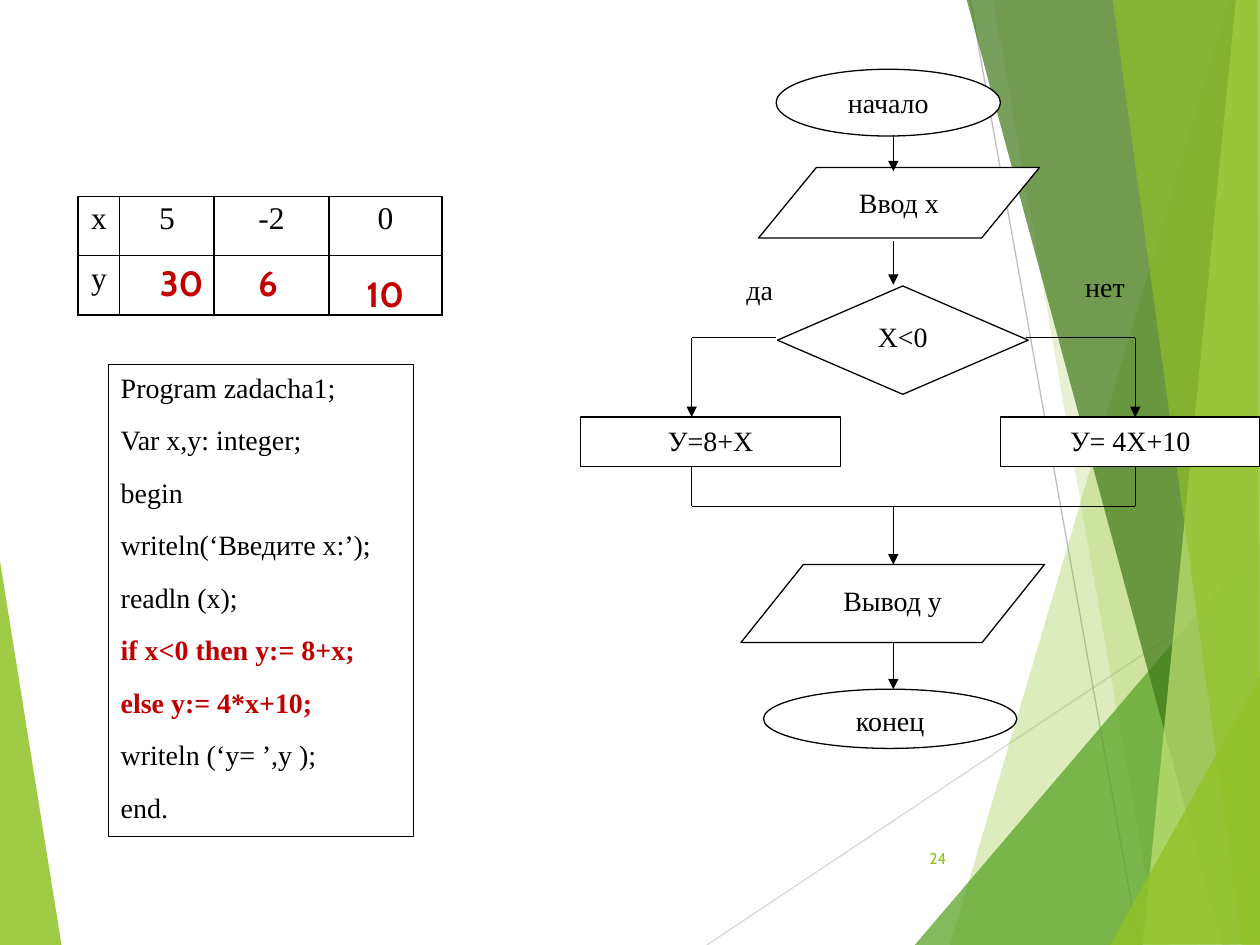
import pptx
import pptx.util
import pptx.dml.color
import pptx.enum.shapes
import pptx.enum.text
import pptx.oxml
import pptx.oxml.ns

Inches, Pt = pptx.util.Inches, pptx.util.Pt
MSO = pptx.enum.shapes.MSO_SHAPE
ALIGN = pptx.enum.text.PP_ALIGN
ANCHOR = pptx.enum.text.MSO_ANCHOR
NS = pptx.oxml.ns.nsdecls("a")

BLACK, WHITE, RED, GREEN = "000000", "FFFFFF", "C00000", "90C226"
SERIF = {"name": "Times New Roman", "size": Pt(16), "bold": False}
ANSWER = {"name": "Cabin", "size": Pt(20), "bold": True}
NUMBER = {"name": "Cabin", "size": Pt(9), "bold": False}

# fill, opacity in percent, corner points
FACETS_BACK = [(GREEN, 85, [(-0.01, 4.39), (0.49, 7.51), (-0.01, 7.5)])]
FACETS = [
    (GREEN, 30, [(9.75, 0), (7.54, 7.5), (10.02, 7.51), (10.01, 0.01)]),
    (GREEN, 20, [(7.88, -0.01), (9.19, 7.5), (10.01, 7.5), (10.01, -0.01)]),
    ("54A021", 72, [(7.26, 7.5), (10, 4.29), (10.01, 7.5)]),
    ("3F7819", 70, [(7.67, -0.01), (9.7, 7.5), (10.01, 7.49), (10.01, -0.01)]),
    ("C0E474", 70, [(9.81, -0.01), (9.07, 7.5), (10.01, 7.5), (10, -0.01)]),
    (GREEN, 65, [(8.83, -0.01), (9.86, 7.5), (10, 7.5), (9.98, -0.01)]),
    (GREEN, 80, [(8.81, 7.5), (10.01, 5.35), (10.01, 7.49)]),
]

CODE = [
    ("Program zadacha1;", False),
    ("Var x,y: integer;", False),
    ("begin", False),
    ("writeln(‘Введите x:’);", False),
    ("readln (x);", False),
    ("if x<0 then y:= 8+x;", True),
    ("else y:= 4*x+10;", True),
    ("writeln (‘y= ’,y );", False),
    ("end.", False),
]

MAIN_X, YES_X, NO_X = 7.09, 5.49, 9.01
BRANCH_Y, BOX_TOP, BOX_BOTTOM, MERGE_Y = 2.68, 3.31, 3.7, 4.02

BLOCKS = [
    (MSO.OVAL, (6.16, 0.55, 1.78, 0.53), "начало", None),
    (MSO.PARALLELOGRAM, (6.02, 1.33, 2.23, 0.56), "Ввод х", 0.82),
    (MSO.DIAMOND, (6.17, 2.27, 1.99, 0.86), "Х<0", None),
    (MSO.RECTANGLE, (4.61, BOX_TOP, 2.06, 0.39), "У=8+Х", None),
    (MSO.RECTANGLE, (7.94, BOX_TOP, 2.06, 0.39), "У= 4Х+10", None),
    (MSO.PARALLELOGRAM, (5.88, 4.48, 2.41, 0.62), "Вывод у", 0.8),
    (MSO.OVAL, (6.06, 5.47, 2.01, 0.47), "конец", None),
]


def rgb(color):
    return pptx.dml.color.RGBColor.from_string(color)


def set_format(target, values):
    for name, value in values.items():
        setattr(target, name, value)


def write(p, text, font, color, **para):
    """Put one run into a paragraph; para holds paragraph attributes."""
    set_format(p, para)
    r = p.add_run()
    r.text = text
    set_format(r.font, font)
    r.font.color.rgb = rgb(color)


def add_facet(slide, color, opacity, points):
    corners = [(Inches(x), Inches(y)) for x, y in points]
    fb = slide.shapes.build_freeform(*corners[0], scale=1.0)
    fb.add_line_segments(corners[1:], close=True)
    sp = fb.convert_to_shape()
    sp.shadow.inherit = False
    sp.line.fill.background()
    sp.fill.solid()
    sp.fill.fore_color.rgb = rgb(color)
    clr = sp.fill._xPr.find(".//" + pptx.oxml.ns.qn("a:srgbClr"))
    clr.append(pptx.oxml.parse_xml(f'<a:alpha {NS} val="{opacity * 1000}"/>'))


def add_line(slide, start, end, arrow=False, color=BLACK):
    ends = [Inches(v) for v in (*start, *end)]
    cx = slide.shapes.add_connector(pptx.enum.shapes.MSO_CONNECTOR.STRAIGHT, *ends)
    cx.line.color.rgb = rgb(color)
    cx.line.width = Pt(0.75)
    if arrow:
        cx.line._get_or_add_ln().append(
            pptx.oxml.parse_xml(f'<a:tailEnd {NS} type="triangle"/>'))
    cx._element.spPr.append(pptx.oxml.parse_xml(f"<a:effectLst {NS}/>"))


def add_block(slide, kind, box, slant=None):
    """Add a white outlined shape and return its text frame."""
    sp = slide.shapes.add_shape(kind, *map(Inches, box))
    sp.shadow.inherit = False
    sp.fill.solid()
    sp.fill.fore_color.rgb = rgb(WHITE)
    sp.line.color.rgb = rgb(BLACK)
    sp.line.width = Pt(0.75)
    if slant is not None:
        sp.adjustments[0] = slant
    tf = sp.text_frame
    set_format(tf, {"word_wrap": True, "vertical_anchor": ANCHOR.TOP})
    return tf


def add_label(slide, box, text, font, color, align, anchor=ANCHOR.TOP):
    tf = slide.shapes.add_textbox(*map(Inches, box)).text_frame
    set_format(tf, {"word_wrap": True, "vertical_anchor": anchor})
    write(tf.paragraphs[0], text, font, color, alignment=align)


def add_background(slide):
    for facet in FACETS_BACK:
        add_facet(slide, *facet)
    add_line(slide, (5.61, 7.5), (10.01, 4.57), color="D9D9D9")
    add_line(slide, (7.7, 0), (9.04, 7.5), color="BFBFBF")
    for facet in FACETS:
        add_facet(slide, *facet)


def add_flowchart(slide):
    for kind, box, text, slant in BLOCKS:
        tf = add_block(slide, kind, box, slant)
        write(tf.paragraphs[0], text, SERIF, BLACK, alignment=ALIGN.CENTER)
    for top, bottom in [(1.07, 1.36), (1.91, 2.26), (MERGE_Y, 4.48), (5.1, 5.47)]:
        add_line(slide, (MAIN_X, top), (MAIN_X, bottom), arrow=True)
    for corner_x, x in [(6.16, YES_X), (8.14, NO_X)]:
        add_line(slide, (corner_x, BRANCH_Y), (x, BRANCH_Y))
        add_line(slide, (x, BRANCH_Y), (x, BOX_TOP), arrow=True)
        add_line(slide, (x, BOX_BOTTOM), (x, MERGE_Y))
    add_line(slide, (YES_X, MERGE_Y), (NO_X, MERGE_Y))
    add_label(slide, (5.7, 2.11, 0.66, 0.45), "да", SERIF, BLACK, ALIGN.CENTER)
    add_label(slide, (8.4, 2.09, 0.74, 0.45), "нет", SERIF, BLACK, ALIGN.CENTER)


def add_borders(cell):
    tcPr = cell._tc.get_or_add_tcPr()
    for i, side in enumerate("LRTB"):
        tcPr.insert(i, pptx.oxml.parse_xml(
            f'<a:ln{side} {NS} w="12700"><a:solidFill><a:srgbClr val="{BLACK}"/>'
            f"</a:solidFill></a:ln{side}>"))


def add_values_table(slide):
    rows = [["х", "5", "-2", "0"], ["у", "", "", ""]]
    box = map(Inches, (0.62, 1.56, 2.89, 0.94))
    table = slide.shapes.add_table(2, 4, *box).table
    set_format(table, {"first_row": False, "horz_banding": False})
    for column, width in zip(table.columns, (0.33, 0.75, 0.91, 0.9)):
        column.width = Inches(width)
    margins = {"margin_left": Inches(0.07), "margin_right": Inches(0.07),
               "margin_top": 0, "margin_bottom": 0}
    for i, row in enumerate(rows):
        for j, text in enumerate(row):
            cell = table.cell(i, j)
            set_format(cell, margins)
            cell.fill.background()
            add_borders(cell)
            if text:
                write(cell.text_frame.paragraphs[0], text, {**SERIF, "size": Pt(18)},
                      BLACK, alignment=ALIGN.CENTER, line_spacing=1.15)


def add_code(slide):
    tf = add_block(slide, MSO.RECTANGLE, (0.86, 2.89, 2.42, 3.75))
    for i, (line, marked) in enumerate(CODE):
        p = tf.add_paragraph() if i else tf.paragraphs[0]
        write(p, line, {**SERIF, "bold": marked}, RED if marked else BLACK,
              alignment=ALIGN.LEFT, space_after=Pt(10.8))


def main():
    prs = pptx.Presentation()
    set_format(prs, {"slide_width": Inches(10), "slide_height": Inches(7.5)})
    slide = prs.slides.add_slide(prs.slide_layouts[6])
    add_background(slide)
    add_flowchart(slide)
    add_values_table(slide)
    add_code(slide)
    for x, y, width, text in [(1.17, 2.03, 0.55, "30"), (1.95, 2.03, 0.47, "6"),
                              (2.81, 2.11, 0.63, "10")]:
        add_label(slide, (x, y, width, 0.44), text, ANSWER, RED, ALIGN.LEFT)
    add_label(slide, (7.05, 6.61, 0.56, 0.4), "24", NUMBER, GREEN, ALIGN.RIGHT,
              ANCHOR.MIDDLE)
    prs.save("out.pptx")


if __name__ == "__main__":
    main()
